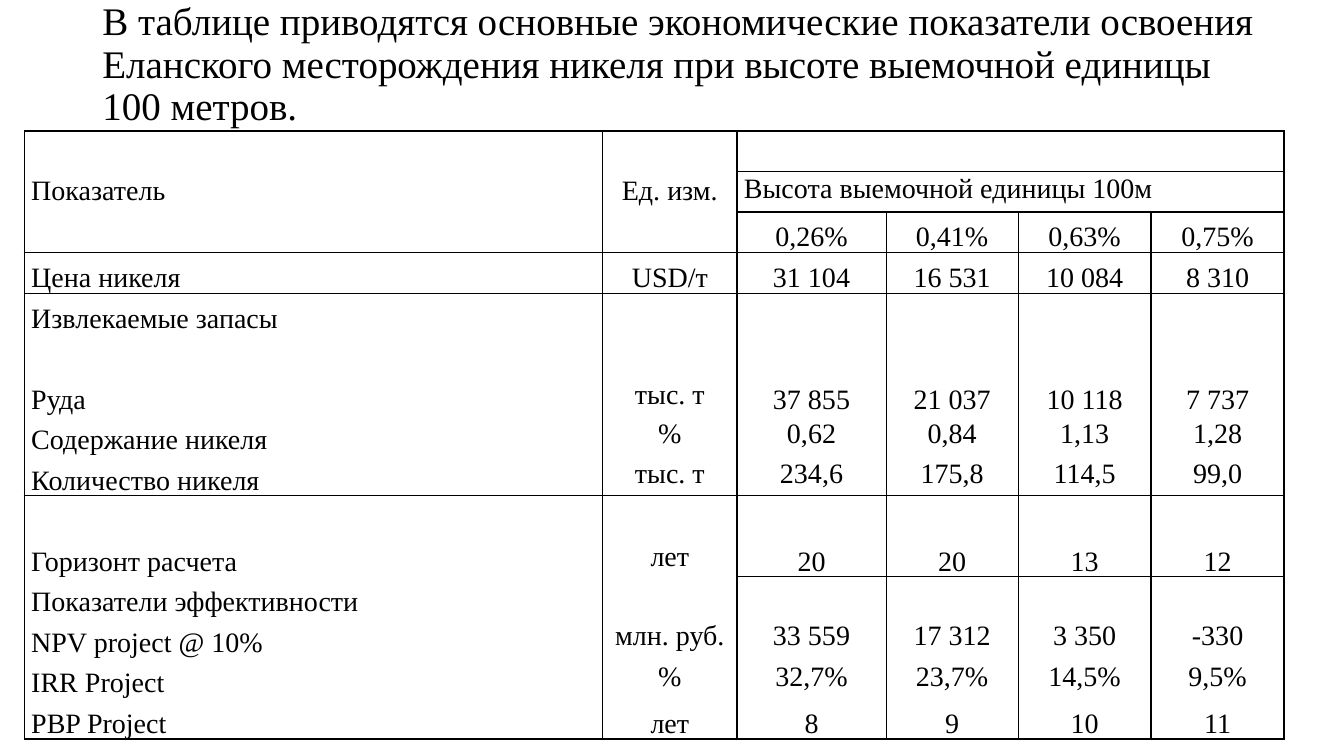
import pptx
import pptx.util
import pptx.dml.color
import pptx.enum.text
import pptx.oxml
import lxml.etree

Pt = pptx.util.Pt
ALIGN = pptx.enum.text.PP_ALIGN
ANCHOR = pptx.enum.text.MSO_ANCHOR
BLACK = pptx.dml.color.RGBColor(0x00, 0x00, 0x00)
FONT = "Times New Roman"
NS = "{http://schemas.openxmlformats.org/drawingml/2006/main}"
PLAIN_STYLE = "{2D5ABB26-0587-4C30-8999-92F81FD0307C}"

TITLE = ("В таблице приводятся основные экономические показатели освоения "
         "Еланского месторождения никеля при высоте выемочной единицы 100 метров.")
ROWS = [
    ["Показатель", "Ед. изм.", "", "", "", ""],
    ["", "", "Высота выемочной единицы 100м", "", "", ""],
    ["", "", "0,26%", "0,41%", "0,63%", "0,75%"],
    ["Цена никеля", "USD/т", "31 104", "16 531", "10 084", "8 310"],
    ["Извлекаемые запасы", "", "", "", "", ""],
    ["Руда", "тыс. т", "37 855", "21 037", "10 118", "7 737"],
    ["Содержание никеля", "%", "0,62", "0,84", "1,13", "1,28"],
    ["Количество никеля", "тыс. т", "234,6", "175,8", "114,5", "99,0"],
    ["Горизонт расчета", "лет", "20", "20", "13", "12"],
    ["Показатели эффективности", "", "", "", "", ""],
    ["NPV project @ 10%", "млн. руб.", "33 559", "17 312", "3 350", "-330"],
    ["IRR Project", "%", "32,7%", "23,7%", "14,5%", "9,5%"],
    ["PBP Project", "лет", "8", "9", "10", "11"],
]
COL_WIDTHS = [413.3, 95.8, 106.6, 94.3, 95, 95]
ROW_HEIGHT = 28.95
MERGES = [((0, 0), (2, 0)), ((0, 1), (2, 1)), ((0, 2), (0, 5)), ((1, 2), (1, 5))]
SPAN_ROW = 1
TALL_ROWS = {5, 8}
MIDDLE_ROWS = {6, 7, 10, 11}
FULL_RULES = {1, 2, 3, 4, 8}
VALUE_RULES = {9}


def format_text(tf, size, align, spacing, after):
    p = tf.paragraphs[0]
    p.alignment = align
    p.line_spacing = spacing
    p.space_after = Pt(after)
    for r in p.runs:
        r.font.size = Pt(size)
        r.font.name = FONT
        r.font.color.rgb = BLACK


def add_title(s):
    sp = s.shapes.title
    sp.left, sp.top, sp.width, sp.height = Pt(66), Pt(1.5), Pt(845), Pt(126.7)
    tf = sp.text_frame
    tf.text = TITLE
    tf.word_wrap = True
    tf.auto_size = pptx.enum.text.MSO_AUTO_SIZE.NONE
    tf.vertical_anchor = ANCHOR.TOP
    tf.margin_top = 0
    format_text(tf, 27.9, ALIGN.LEFT, 0.9, 0)


def rule_width(edge, col):
    if edge in (0, len(ROWS)):
        return 1.5
    if edge in FULL_RULES or (edge in VALUE_RULES and col >= 2):
        return 1
    return 0


def set_borders(cell, row, col):
    last = row if cell.span_height == 1 else row + cell.span_height - 1
    widths = {
        "lnL": 1.5 if col == 2 else 1,
        "lnR": 1.5 if col == 1 or (col == 5 and row > SPAN_ROW) else 1,
        "lnT": rule_width(row, col),
        "lnB": rule_width(last + 1, col),
    }
    tcPr = cell._tc.get_or_add_tcPr()
    for tag, width in widths.items():
        ln = lxml.etree.SubElement(tcPr, NS + tag, w=str(int(Pt(width))))
        if width:
            fill = lxml.etree.SubElement(ln, NS + "solidFill")
            lxml.etree.SubElement(fill, NS + "srgbClr", val=str(BLACK))
        else:
            lxml.etree.SubElement(ln, NS + "noFill")


def cell_anchor(row, col):
    if row == SPAN_ROW:
        return ANCHOR.TOP
    if row == 0 or row in MIDDLE_ROWS and col or row in TALL_ROWS and col == 1:
        return ANCHOR.MIDDLE
    return ANCHOR.BOTTOM


def fill_cell(cell, row, col, text):
    set_borders(cell, row, col)
    cell.fill.background()
    cell.margin_left = cell.margin_right = Pt(5)
    cell.margin_top = Pt(31) if row in TALL_ROWS and col == 1 else 0
    cell.margin_bottom = 0
    cell.vertical_anchor = cell_anchor(row, col)
    if not text:
        return
    cell.text_frame.text = text
    if row == SPAN_ROW:
        format_text(cell.text_frame, 20, ALIGN.LEFT, 1.07, 8)
    else:
        align = ALIGN.CENTER if col else ALIGN.JUSTIFY
        format_text(cell.text_frame, 20, align, 0.9, 10)


def add_indicator_table(s):
    heights = [ROW_HEIGHT * (2 if i in TALL_ROWS else 1) for i in range(len(ROWS))]
    frame = s.shapes.add_table(len(ROWS), len(COL_WIDTHS), Pt(17.3), Pt(93.6),
                               Pt(sum(COL_WIDTHS)), Pt(sum(heights)))
    table = frame.table
    table.first_row = table.horz_banding = False
    table._tbl.tblPr.find(NS + "tableStyleId").text = PLAIN_STYLE
    for column, width in zip(table.columns, COL_WIDTHS):
        column.width = Pt(width)
    for table_row, height in zip(table.rows, heights):
        table_row.height = Pt(height)
    for start, end in MERGES:
        table.cell(*start).merge(table.cell(*end))
    for row, texts in enumerate(ROWS):
        for col, text in enumerate(texts):
            fill_cell(table.cell(row, col), row, col, text)


def main():
    prs = pptx.Presentation()
    prs.slide_width, prs.slide_height = Pt(960), Pt(540)
    s = prs.slides.add_slide(prs.slide_layouts[5])
    add_title(s)
    add_indicator_table(s)
    prs.save("out.pptx")


if __name__ == "__main__":
    main()
